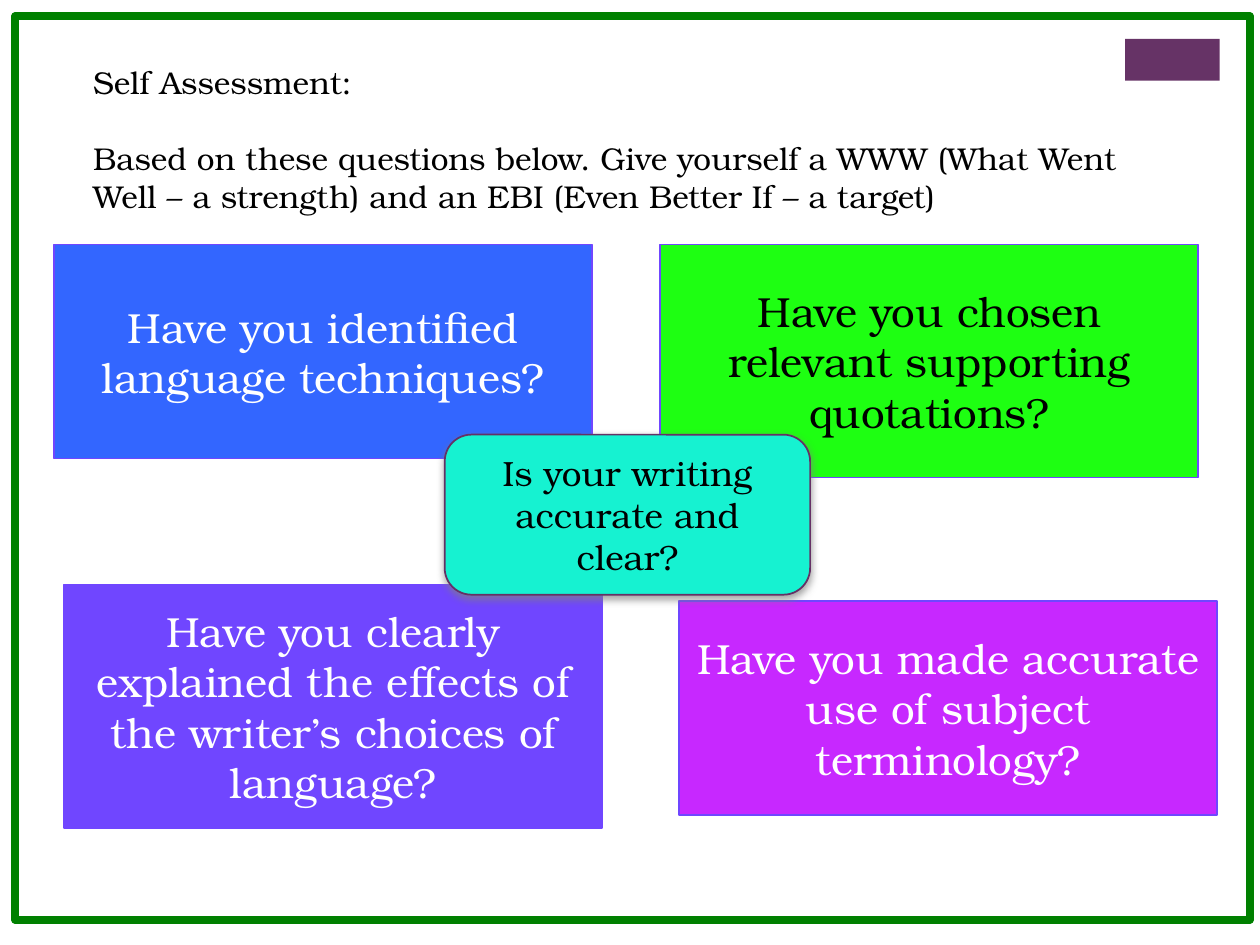
from dataclasses import dataclass

import lxml.etree
import pptx
import pptx.dml.color
import pptx.enum.shapes
import pptx.enum.text
import pptx.oxml.ns
import pptx.util

Inches = pptx.util.Inches
Pt = pptx.util.Pt
RGBColor = pptx.dml.color.RGBColor
Kind = pptx.enum.shapes.MSO_SHAPE
Align = pptx.enum.text.PP_ALIGN
Anchor = pptx.enum.text.MSO_ANCHOR
qn = pptx.oxml.ns.qn

FONT = "TeX Gyre Bonum"
WHITE = RGBColor(0xFF, 0xFF, 0xFF)
BLACK = RGBColor(0x00, 0x00, 0x00)
PLUM = RGBColor(0x66, 0x33, 0x66)
DARK = RGBColor(0x65, 0x31, 0x65)
GREEN = RGBColor(0x00, 0x80, 0x00)
BLUE = RGBColor(0x33, 0x66, 0xFF)
VIOLET = RGBColor(0x70, 0x46, 0xFF)
PINK = RGBColor(0xC7, 0x28, 0xFF)
LIME = RGBColor(0x1E, 0xFF, 0x12)
AQUA = RGBColor(0x16, 0xF2, 0xD1)


@dataclass
class Card:
    text: str
    left: float
    top: float
    width: float
    height: float
    fill: RGBColor
    ink: RGBColor = WHITE
    line: RGBColor = VIOLET
    size: int = 24
    kind: Kind = Kind.RECTANGLE


WIDE = 4.27
CARDS = [
    Card("Have you identified language techniques?",
         0.43, 1.94, WIDE, 1.7, BLUE),
    Card("Have you clearly explained the effects of the writer’s choices of language?",
         0.51, 4.64, WIDE, 1.93, VIOLET),
    Card("Have you made accurate use of subject terminology?",
         5.39, 4.77, WIDE, 1.7, PINK),
    Card("Have you chosen relevant supporting quotations?",
         5.24, 1.94, WIDE, 1.85, LIME, BLACK),
]
CENTRE = Card("Is your writing accurate and clear?", 3.53, 3.45, 2.9, 1.27,
              AQUA, BLACK, DARK, 20, Kind.ROUNDED_RECTANGLE)
INTRO = [
    "Self Assessment:",
    "Based on these questions below. Give yourself a WWW (What Went Well – a strength) "
    "and an EBI (Even Better If – a target)",
]


def add_box(slide, kind: Kind, left: float, top: float, width: float, height: float,
            fill: RGBColor | None = None, line: RGBColor | None = None,
            weight: float = 1):
    box = slide.shapes.add_shape(kind, Inches(left), Inches(top),
                                 Inches(width), Inches(height))
    box.shadow.inherit = False
    if fill is None:
        box.fill.background()
    else:
        box.fill.solid()
        box.fill.fore_color.rgb = fill
    if line is None:
        box.line.fill.background()
    else:
        box.line.color.rgb = line
        box.line.width = Pt(weight)
    return box


def add_run(para, text: str, size: float, ink: RGBColor) -> None:
    run = para.add_run()
    run.text = text
    run.font.name = FONT
    run.font.size = Pt(size)
    run.font.color.rgb = ink


def add_card(slide, card: Card):
    box = add_box(slide, card.kind, card.left, card.top, card.width, card.height,
                  card.fill, card.line)
    frame = box.text_frame
    frame.word_wrap = True
    frame.vertical_anchor = Anchor.MIDDLE
    para = frame.paragraphs[0]
    para.alignment = Align.CENTER
    add_run(para, card.text, card.size, card.ink)
    return box


def add_shadow(box) -> None:
    effects = box._element.spPr.find(qn("a:effectLst"))
    shade = lxml.etree.SubElement(
        effects, qn("a:outerShdw"), blurRad=str(Pt(5)), dist=str(Pt(2)),
        dir="5400000", rotWithShape="0")
    tint = lxml.etree.SubElement(shade, qn("a:srgbClr"), val="808080")
    lxml.etree.SubElement(tint, qn("a:alpha"), val="75000")


def add_intro(slide) -> None:
    box = slide.shapes.add_textbox(Inches(0.64), Inches(0.45),
                                   Inches(8.62), Inches(1.31))
    frame = box.text_frame
    frame.word_wrap = True
    for i, text in enumerate(INTRO):
        para = frame.add_paragraph() if i else frame.paragraphs[0]
        para.space_before = Pt(22 if i else 0)
        add_run(para, text, 18, BLACK)


def main() -> None:
    deck = pptx.Presentation()
    deck.slide_width = Inches(10)
    deck.slide_height = Inches(7.5)
    slide = deck.slides.add_slide(deck.slide_layouts[6])

    # Corner block and page frame
    add_box(slide, Kind.RECTANGLE, 8.93, 0.31, 0.75, 0.33, fill=PLUM)
    add_box(slide, Kind.RECTANGLE, 0.12, 0.13, 9.8, 7.17, line=GREEN, weight=4.5)

    # Question cards, with the centre one on top
    for card in CARDS:
        add_card(slide, card)
    add_shadow(add_card(slide, CENTRE))

    # Instructions
    add_intro(slide)
    deck.save("out.pptx")


if __name__ == "__main__":
    main()
